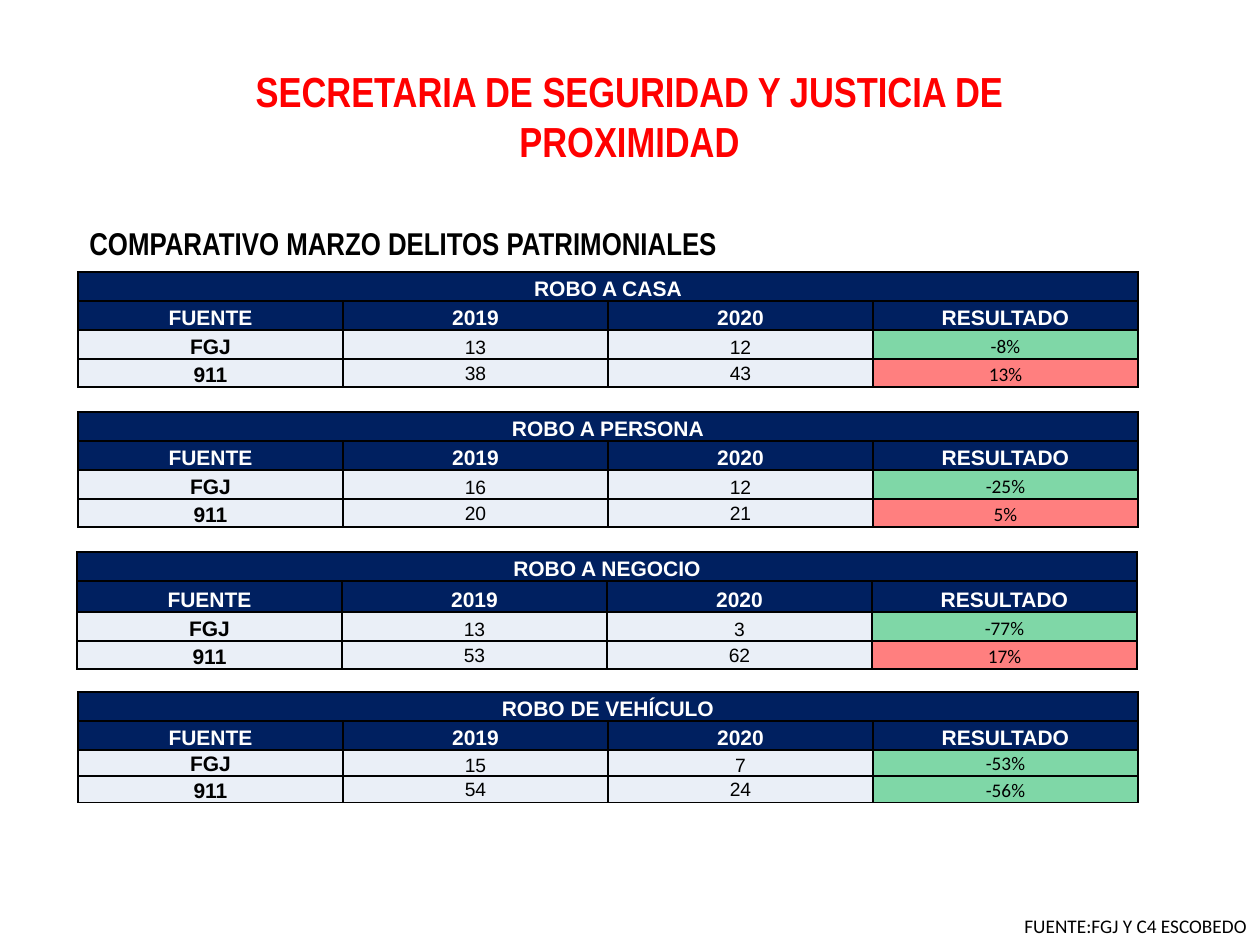
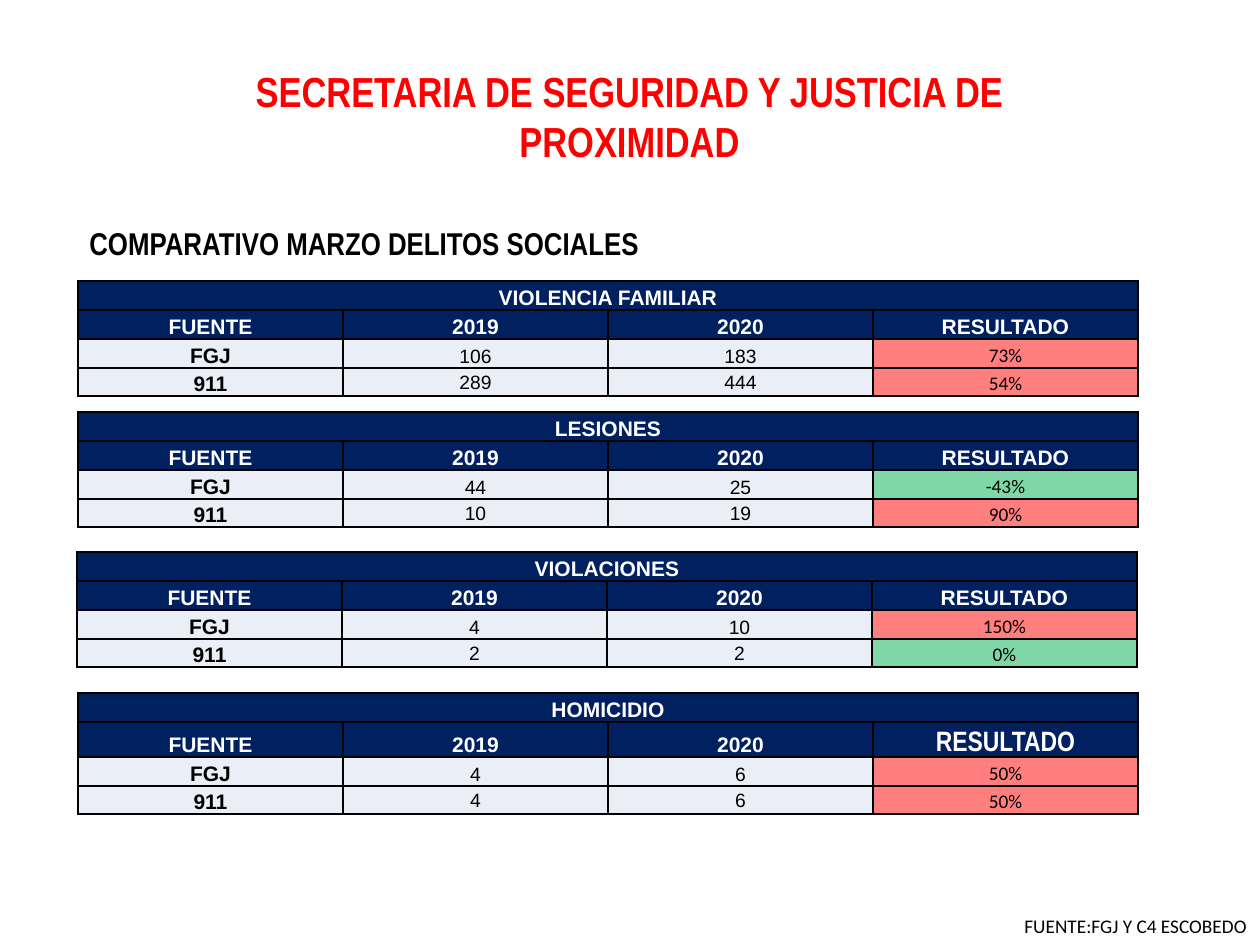
import lxml.etree
import pptx
import pptx.dml.color
import pptx.enum.text
import pptx.oxml.ns
import pptx.util

PX = 914400 / 126
NAVY, PALE, GREEN, RED = "002060", "EAEFF7", "00B050", "FF0000"
BLACK, WHITE = "000000", "FFFFFF"
ALIGN = pptx.enum.text.PP_ALIGN
ANCHOR = pptx.enum.text.MSO_ANCHOR
AGENCY = "SECRETARIA DE SEGURIDAD Y JUSTICIA DE PROXIMIDAD"
SOURCE = "FUENTE:FGJ Y C4 ESCOBEDO"
COLUMNS = ("FUENTE", "2019", "2020", "RESULTADO")
COLUMN_WIDTH = 265
ROW_HEIGHTS = (29, 29, 29, 28)


def px(length):
    return pptx.util.Emu(round(length * PX))


def color(code):
    return pptx.dml.color.RGBColor.from_string(code)


def write(frame, text, size=12, font="Arial", ink=BLACK, bold=False, align=ALIGN.CENTER):
    para = frame.paragraphs[0]
    para.alignment = align
    span = para.add_run()
    span.text = text
    span.font.size = pptx.util.Pt(size)
    span.font.name = font
    span.font.bold = bold
    span.font.color.rgb = color(ink)


def add_child(parent, tag, **attributes):
    return lxml.etree.SubElement(parent, pptx.oxml.ns.qn(tag), **attributes)


class Report:
    def __init__(self):
        self.deck = pptx.Presentation()
        self.deck.slide_width = px(1260)
        self.deck.slide_height = px(945)
        self.page = None

    def new_page(self):
        layout = self.deck.slide_layouts.get_by_name("Title Only")
        self.page = self.deck.slides.add_slide(layout)

    def title(self, text):
        box = self.page.shapes.title
        box.left, box.top, box.width, box.height = map(px, (239, 59, 781, 115))
        frame = box.text_frame
        frame.auto_size = pptx.enum.text.MSO_AUTO_SIZE.SHAPE_TO_FIT_TEXT
        frame.vertical_anchor = ANCHOR.TOP
        write(frame, text, size=24, font="Arial Narrow", ink=RED, bold=True)

    def text(self, text, left, top, width, height, wrap=True, **style):
        box = self.page.shapes.add_textbox(*map(px, (left, top, width, height)))
        frame = box.text_frame
        frame.word_wrap = wrap
        frame.auto_size = pptx.enum.text.MSO_AUTO_SIZE.SHAPE_TO_FIT_TEXT
        write(frame, text, align=ALIGN.LEFT, **style)

    def cell(self, cell, text, fill, alpha=None, anchor=ANCHOR.BOTTOM, **style):
        properties = cell._tc.get_or_add_tcPr()
        for side in ("a:lnL", "a:lnR", "a:lnT", "a:lnB"):
            line = add_child(properties, side, w="12700")
            add_child(add_child(line, "a:solidFill"), "a:srgbClr", val=BLACK)
        cell.fill.solid()
        cell.fill.fore_color.rgb = color(fill)
        if alpha:
            shade = properties.find(pptx.oxml.ns.qn("a:solidFill"))[0]
            add_child(shade, "a:alpha", val=str(alpha * 1000))
        cell.margin_left = cell.margin_top = cell.margin_right = px(1)
        cell.margin_bottom = 0
        cell.vertical_anchor = anchor
        if text:
            write(cell.text_frame, text, **style)

    def crime_table(self, crime, left, top, counts, heights=ROW_HEIGHTS, result_style=None):
        width = COLUMN_WIDTH * len(COLUMNS)
        frame = self.page.shapes.add_table(
            len(heights), len(COLUMNS), *map(px, (left, top, width, sum(heights))))
        table = frame.table
        table.horz_banding = False
        for row, height in zip(table.rows, heights):
            row.height = px(height)
        for column in table.columns:
            column.width = px(COLUMN_WIDTH)

        heading = {"fill": NAVY, "ink": WHITE, "bold": True}
        table.cell(0, 0).merge(table.cell(0, len(COLUMNS) - 1))
        for index, label in enumerate(COLUMNS):
            self.cell(table.cell(0, index), "" if index else crime, **heading)
            extra = (result_style or {}) if label == "RESULTADO" else {}
            self.cell(table.cell(1, index), label, **heading, **extra)

        anchors = (ANCHOR.BOTTOM, ANCHOR.MIDDLE)
        for row, (agency, years, anchor) in enumerate(zip(("FGJ", "911"), counts, anchors), 2):
            self.cell(table.cell(row, 0), agency, PALE, bold=True)
            for index, count in enumerate(years, 1):
                self.cell(table.cell(row, index), str(count), PALE, anchor=anchor, size=11)
            before, after = years
            change = round((after - before) / before * 100)
            self.cell(table.cell(row, 3), f"{change}%", RED if change > 0 else GREEN,
                      alpha=50, size=11, font="Calibri")


PAGES = {
    "COMPARATIVO MARZO DELITOS PATRIMONIALES": [
        dict(crime="ROBO A CASA", left=78, top=272, counts=((13, 12), (38, 43))),
        dict(crime="ROBO A PERSONA", left=78, top=412, counts=((16, 12), (20, 21))),
        dict(crime="ROBO A NEGOCIO", left=77, top=552, counts=((13, 3), (53, 62)),
             heights=(29, 31, 29, 28)),
        dict(crime="ROBO DE VEHÍCULO", left=78, top=692, counts=((15, 7), (54, 24)),
             heights=(29, 29, 26, 26)),
    ],
    "COMPARATIVO MARZO DELITOS SOCIALES": [
        dict(crime="VIOLENCIA FAMILIAR", left=78, top=281, counts=((106, 183), (289, 444))),
        dict(crime="LESIONES", left=78, top=412, counts=((44, 25), (10, 19))),
        dict(crime="VIOLACIONES", left=77, top=552, counts=((4, 10), (2, 2))),
        dict(crime="HOMICIDIO", left=78, top=693, counts=((4, 6), (4, 6)),
             heights=(29, 35, 29, 28), result_style=dict(size=16, font="Arial Narrow")),
    ],
}


def main():
    report = Report()
    for subtitle, tables in PAGES.items():
        report.new_page()
        report.title(AGENCY)
        report.text(subtitle, 77, 218, 930, 50, size=18, font="Arial Narrow", bold=True)
        for table in tables:
            report.crime_table(**table)
        report.text(SOURCE, 1012, 908, 249, 37, wrap=False, size=11, font="Calibri")
    report.deck.save("out.pptx")


if __name__ == "__main__":
    main()
